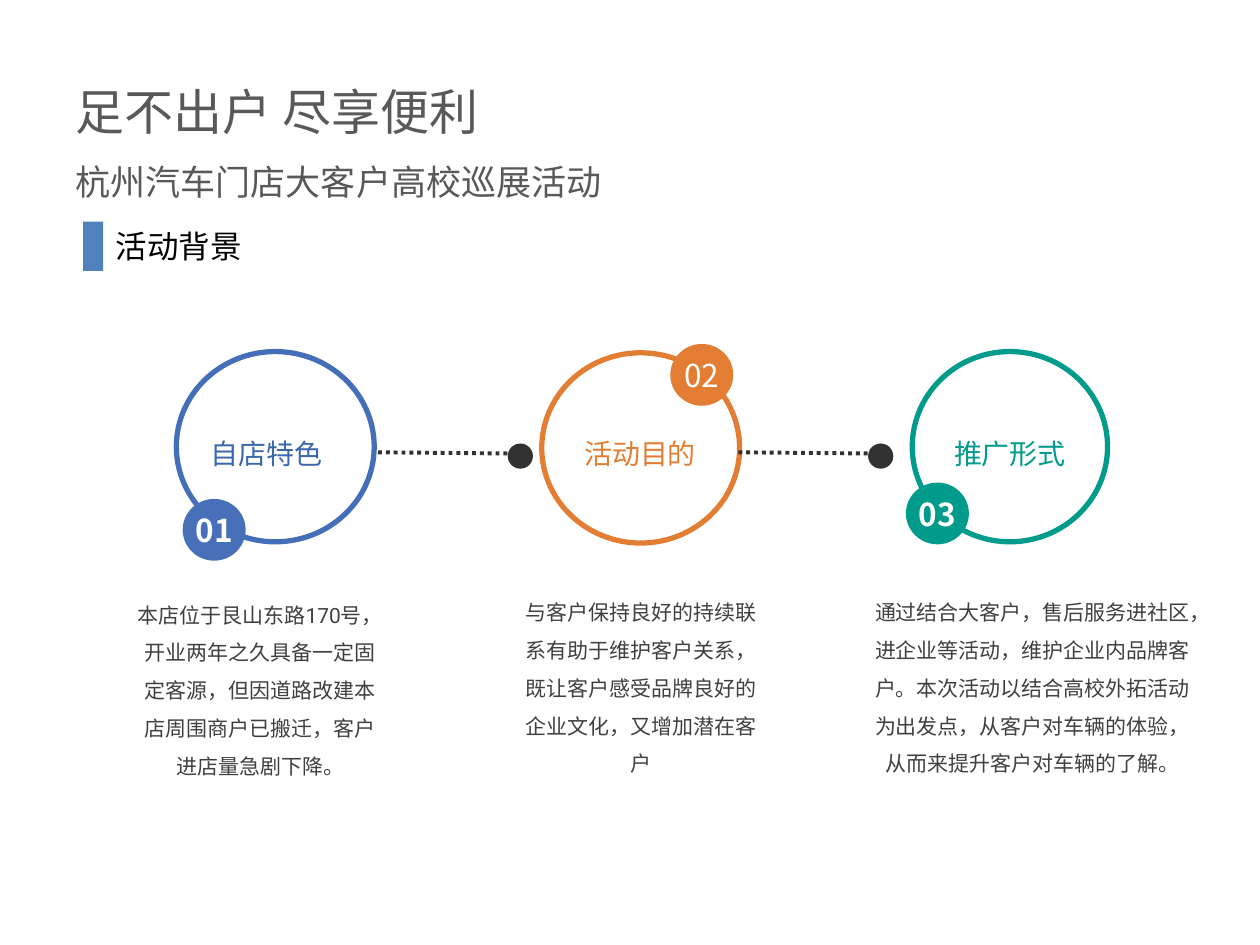
from pptx import Presentation
from pptx.dml.color import RGBColor
from pptx.enum.dml import MSO_LINE
from pptx.enum.shapes import MSO_CONNECTOR, MSO_SHAPE
from pptx.enum.text import MSO_ANCHOR, MSO_AUTO_SIZE, PP_ALIGN
from pptx.oxml.ns import qn
from pptx.util import Inches, Pt
from lxml.etree import SubElement

# Content: places are (left, top, width, height) in inches
TITLE = "足不出户 尽享便利"
SUBTITLE = "杭州汽车门店大客户高校巡展活动"
SECTION = "活动背景"
TOPICS = [
    dict(number="01", label="自店特色", color="456EB8", badge_color="4870B9",
         label_color="3B67AD", bold=True,
         ring=(1.4, 2.79, 1.57, 1.51), badge=(1.45, 3.96),
         label_at=(1.42, 1.39), body_at=(0.97, 4.63, 2.19, 1.58),
         body="本店位于艮山东路170号，开业两年之久具备一定固定客源，"
              "但因道路改建本店周围商户已搬迁，客户进店量急剧下降。"),
    dict(number="02", label="活动目的", color="E37D34", badge_color="E37D34",
         label_color="E37D34", bold=False,
         ring=(4.3, 2.8, 1.57, 1.51), badge=(5.32, 2.73),
         label_at=(4.14, 1.88), body_at=(4.04, 4.61, 2.09, 1.58),
         body="与客户保持良好的持续联系有助于维护客户关系，"
              "既让客户感受品牌良好的企业文化，又增加潜在客户"),
    dict(number="03", label="推广形式", color="019B8B", badge_color="019B8B",
         label_color="019B8B", bold=True,
         ring=(7.24, 2.79, 1.55, 1.51), badge=(7.19, 3.83),
         label_at=(7.32, 1.39), body_at=(6.83, 4.61, 2.73, 1.58),
         body="通过结合大客户，售后服务进社区，进企业等活动，维护企业内品牌客户。"
              "本次活动以结合高校外拓活动为出发点，从客户对车辆的体验，"
              "从而来提升客户对车辆的了解。"),
]
LINKS = [(3, 4.1), (5.86, 6.96)]  # start and end x of the dotted links
LINK_Y, DOT_TOP, DOT_SIZE = 3.59, 3.52, 0.2
LABEL_TOP, LABEL_H = 3.28, 0.45
BADGE_SIZE = (0.5, 0.49)

THEME = dict(
    font="Roboto", badge_font="Noto Sans CJK SC",
    title="595959", section="000000", body="404040",
    accent="4F81BD", dark="323232", white="FFFFFF",
    title_pt=28, subtitle_pt=20, section_pt=18, badge_pt=18,
    label_pt=16, body_pt=12, ring_pt=3, link_pt=2.25,
)


def rgb(value):
    return RGBColor.from_string(value)


def write(p, text, size, color, align=PP_ALIGN.LEFT, spacing=1.0,
          font=THEME["font"], bold=False):
    p.alignment, p.line_spacing = align, spacing
    r = p.add_run()
    r.text = text
    for name, value in dict(name=font, size=Pt(size), bold=bold).items():
        setattr(r.font, name, value)
    r.font.color.rgb = rgb(color)


def add_text(slide, at, *args, **formats):
    tf = slide.shapes.add_textbox(*map(Inches, at)).text_frame
    tf.word_wrap = True
    write(tf.paragraphs[0], *args, **formats)


def add_shape(slide, kind, at, fill, line=None):
    sp = slide.shapes.add_shape(kind, *map(Inches, at))
    sp.shadow.inherit = False
    sp.fill.solid()
    sp.fill.fore_color.rgb = rgb(fill)
    if line:
        sp.line.color.rgb = rgb(line)
        sp.line.width = Pt(THEME["ring_pt"])
    else:
        sp.line.fill.background()
    return sp


def add_link(slide, start, end):
    ends = (start, LINK_Y, end, LINK_Y + 0.01)
    link = slide.shapes.add_connector(MSO_CONNECTOR.STRAIGHT, *map(Inches, ends))
    link.line.color.rgb = rgb(THEME["dark"])
    link.line.width = Pt(THEME["link_pt"])
    link.line.dash_style = MSO_LINE.ROUND_DOT
    SubElement(link._element.spPr, qn("a:effectLst"))
    # Dot at the end of the link
    left = end - 0.07
    add_shape(slide, MSO_SHAPE.OVAL, (left, DOT_TOP, DOT_SIZE, DOT_SIZE), THEME["dark"])


def add_topic(slide, topic):
    add_shape(slide, MSO_SHAPE.OVAL, topic["ring"], THEME["white"], topic["color"])

    # Number badge
    sp = add_shape(slide, MSO_SHAPE.OVAL, topic["badge"] + BADGE_SIZE, topic["badge_color"])
    tf = sp.text_frame
    tf.vertical_anchor = MSO_ANCHOR.MIDDLE
    for side in ("left", "top", "right", "bottom"):
        setattr(tf, f"margin_{side}", 0)
    write(tf.paragraphs[0], topic["number"], THEME["badge_pt"], THEME["white"],
          align=PP_ALIGN.CENTER, font=THEME["badge_font"], bold=topic["bold"])

    # Label and description
    centered = dict(align=PP_ALIGN.CENTER, spacing=1.5)
    left, width = topic["label_at"]
    add_text(slide, (left, LABEL_TOP, width, LABEL_H), topic["label"],
             THEME["label_pt"], topic["label_color"], **centered)
    add_text(slide, topic["body_at"], topic["body"],
             THEME["body_pt"], THEME["body"], **centered)


def main():
    prs = Presentation()
    prs.slide_width, prs.slide_height = Inches(10), Inches(7.5)
    slide = prs.slides.add_slide(prs.slide_layouts[5])

    # Title and subtitle
    title = slide.shapes.title
    title.left, title.top, title.width, title.height = map(Inches, (0.5, 0.36, 7.01, 1.25))
    tf = title.text_frame
    tf.word_wrap, tf.auto_size = True, MSO_AUTO_SIZE.NONE
    tf.vertical_anchor = MSO_ANCHOR.TOP
    write(tf.paragraphs[0], TITLE, THEME["title_pt"], THEME["title"], spacing=1.5)
    write(tf.add_paragraph(), SUBTITLE, THEME["subtitle_pt"], THEME["title"], spacing=1.5)

    # Section heading
    add_shape(slide, MSO_SHAPE.RECTANGLE, (0.66, 1.76, 0.16, 0.39), THEME["accent"])
    add_text(slide, (0.82, 1.75, 2.27, 0.4), SECTION, THEME["section_pt"], THEME["section"])

    # Topics and the links between them
    for topic in TOPICS:
        add_topic(slide, topic)
    for start, end in LINKS:
        add_link(slide, start, end)

    prs.save("out.pptx")


if __name__ == "__main__":
    main()
